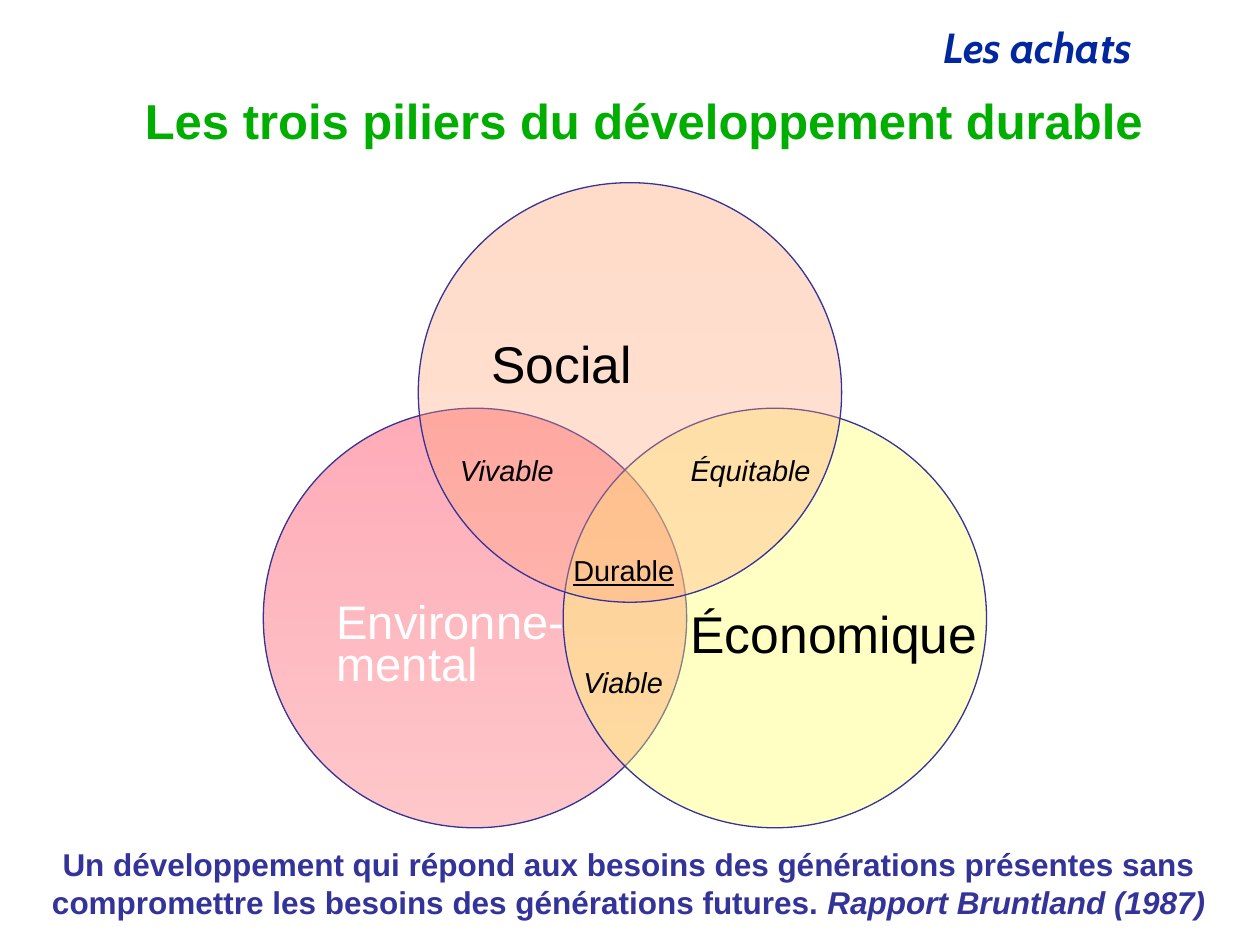
import pptx
import pptx.dml.color
import pptx.enum.shapes
import pptx.enum.text
import pptx.oxml.ns
import pptx.util
from lxml import etree
from pptx.util import Inches

RGBColor = pptx.dml.color.RGBColor
ALIGN = pptx.enum.text.PP_ALIGN
ANCHOR = pptx.enum.text.MSO_ANCHOR
AUTO_SIZE = pptx.enum.text.MSO_AUTO_SIZE
qn = pptx.oxml.ns.qn

NAVY = RGBColor(0x00, 0x27, 0x9F)
GREEN = RGBColor(0x00, 0xAE, 0x00)
INDIGO = RGBColor(0x33, 0x33, 0x99)
BLACK = RGBColor(0x00, 0x00, 0x00)
WHITE = RGBColor(0xFF, 0xFF, 0xFF)
RED = RGBColor(0xFC, 0x01, 0x28)
CORAL = RGBColor(0xFC, 0x58, 0x5D)
YELLOW = RGBColor(0xFF, 0xFF, 0x66)
ORANGE = RGBColor(0xFF, 0x99, 0x66)
PEACH = RGBColor(0xFF, 0xAD, 0x83)

CIRCLE_W, CIRCLE_H = 3.36, 3.33


def style(paragraph, size, color, align=ALIGN.LEFT, name="Arial",
          bold=False, italic=False, underline=False):
    paragraph.alignment = align
    font = paragraph.font
    font.name, font.size = name, pptx.util.Pt(size)
    font.bold, font.italic, font.underline = bold, italic, underline
    font.color.rgb = color


def space_before_percent(paragraph, percent):
    """Space before as a share of the text size, which Pt cannot express."""
    paragraph.space_before = pptx.util.Pt(0)
    spacing = paragraph._p.pPr.find(qn("a:spcBef"))
    spacing.remove(spacing[0])
    etree.SubElement(spacing, qn("a:spcPct"), val=str(percent * 1000))


def set_insets(frame, left, top, right, bottom):
    frame.margin_left, frame.margin_top = Inches(left), Inches(top)
    frame.margin_right, frame.margin_bottom = Inches(right), Inches(bottom)


def add_text_frame(slide, box, wrap=True):
    frame = slide.shapes.add_textbox(*map(Inches, box)).text_frame
    frame.word_wrap = wrap
    frame.auto_size = AUTO_SIZE.SHAPE_TO_FIT_TEXT
    return frame


def add_header(slide, box):
    header = add_text_frame(slide, box).paragraphs[0]
    header.text = "Les achats"
    style(header, 24, NAVY, ALIGN.RIGHT, "Cabin", bold=True, italic=True)
    header.line_spacing = 0.9
    space_before_percent(header, 50)


def set_title(slide, box):
    title = slide.shapes.title
    title.left, title.top, title.width, title.height = map(Inches, box)
    frame = title.text_frame
    frame.auto_size = AUTO_SIZE.NONE
    frame.vertical_anchor = ANCHOR.MIDDLE
    set_insets(frame, 0.1, 0.05, 0.1, 0.05)
    frame.text = "Les trois piliers du développement durable"
    style(frame.paragraphs[0], 28, GREEN, ALIGN.RIGHT, bold=True)
    frame.paragraphs[0].line_spacing = 0.9


def fill_translucent(shape, colors, opacity):
    """One colour gives a solid fill, two a gradient from top to bottom."""
    fill = shape.fill
    if len(colors) == 1:
        fill.solid()
        fill.fore_color.rgb = colors[0]
    else:
        fill.gradient()
        fill.gradient_angle = 270
        for stop, color in zip(fill.gradient_stops, colors):
            stop.color.rgb = color
    for color in shape._element.spPr.iter(qn("a:srgbClr")):
        etree.SubElement(color, qn("a:alpha"), val=str(opacity * 1000))


def add_pillar(slide, left, top, lines, colors, opacity, size, color, insets,
               align=ALIGN.LEFT, anchor=ANCHOR.BOTTOM, line_spacings=()):
    circle = slide.shapes.add_shape(
        pptx.enum.shapes.MSO_SHAPE.OVAL, Inches(left), Inches(top),
        Inches(CIRCLE_W), Inches(CIRCLE_H))
    circle.shadow.inherit = False
    fill_translucent(circle, colors, opacity)
    circle.line.color.rgb = INDIGO
    circle.line.width = pptx.util.Pt(0.75)
    frame = circle.text_frame
    frame.word_wrap = False
    frame.vertical_anchor = anchor
    set_insets(frame, *insets)
    frame.text = "\n".join(lines)
    for paragraph in frame.paragraphs:
        style(paragraph, size, color, align)
        space_before_percent(paragraph, 20)
    for paragraph, spacing in zip(frame.paragraphs, line_spacings):
        paragraph.line_spacing = spacing


def add_overlap_label(slide, text, left, top, width, **emphasis):
    frame = add_text_frame(slide, (left, top, width, 0.37), wrap=False)
    set_insets(frame, 0.09, 0.05, 0.09, 0.05)
    frame.text = text
    style(frame.paragraphs[0], 16.5, BLACK, **emphasis)
    space_before_percent(frame.paragraphs[0], 20)


def add_venn(slide, left, top):
    lower = top + 1.79
    add_pillar(slide, left, lower, ["Environne-", "mental"], [RED, CORAL], 33,
               26.9, WHITE, (0.09, 0.05, 0.74, 0.63), line_spacings=(1.3, 0.5))
    add_pillar(slide, left + 2.38, lower, ["Économique"], [YELLOW], 39,
               29.5, BLACK, (1.03, 0.05, 0.09, 0.81), align=ALIGN.CENTER)
    add_pillar(slide, left + 1.23, top, ["Social"], [ORANGE, PEACH], 35,
               29.5, BLACK, (0.09, 0.7, 0.09, 0.05), anchor=ANCHOR.TOP)

    add_overlap_label(slide, "Équitable", left + 3.3, top + 2.09, 1.15, italic=True)
    add_overlap_label(slide, "Viable", left + 2.45, top + 3.78, 0.82, italic=True)
    add_overlap_label(slide, "Vivable", left + 1.47, top + 2.09, 0.94, italic=True)
    add_overlap_label(slide, "Durable", left + 2.37, top + 2.89, 0.99, underline=True)


def add_definition(slide, box):
    definition = add_text_frame(slide, box).paragraphs[0]
    style(definition, 18, INDIGO, ALIGN.CENTER, bold=True)
    definition.add_run().text = (
        "Un développement qui répond aux besoins des générations présentes "
        "sans compromettre les besoins des générations futures. ")
    report = definition.add_run()
    report.text = "Rapport Bruntland (1987)"
    report.font.italic = True


def main():
    presentation = pptx.Presentation()
    presentation.slide_width = Inches(10)
    presentation.slide_height = Inches(7.5)
    slide = presentation.slides.add_slide(presentation.slide_layouts[5])
    add_header(slide, (1.33, 0.17, 7.75, 0.46))
    set_title(slide, (-0.59, 0.77, 9.76, 0.43))
    add_venn(slide, 2.09, 1.45)
    add_definition(slide, (0, 6.66, 9.98, 1.08))
    presentation.save("out.pptx")


if __name__ == "__main__":
    main()
